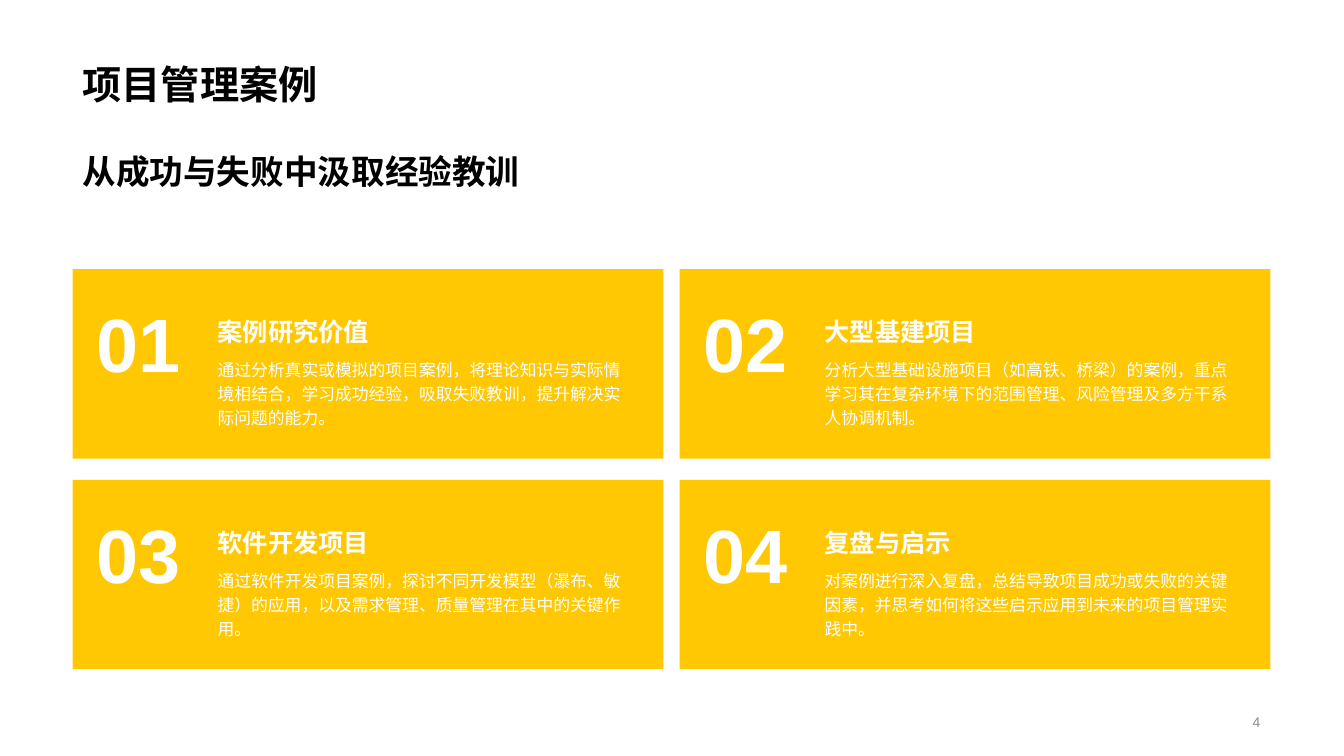
from lxml.etree import SubElement
from pptx import Presentation
from pptx.dml.color import RGBColor
from pptx.enum.shapes import MSO_SHAPE as Kind
from pptx.enum.text import MSO_ANCHOR as Anchor, MSO_AUTO_SIZE as Fit, PP_ALIGN as Align
from pptx.oxml.ns import qn
from pptx.util import Inches, Pt

HAN, LATIN = "Noto Sans CJK SC", "Arial"
BLACK, WHITE, GREY, GOLD = "000000", "FFFFFF", "8C8C8C", "FFC803"

CARDS = [
    ("案例研究价值", "通过分析真实或模拟的项目案例，将理论知识与实际情境相结合，学习成功经验，吸取失败教训，提升解决实际问题的能力。"),
    ("大型基建项目", "分析大型基础设施项目（如高铁、桥梁）的案例，重点学习其在复杂环境下的范围管理、风险管理及多方干系人协调机制。"),
    ("软件开发项目", "通过软件开发项目案例，探讨不同开发模型（瀑布、敏捷）的应用，以及需求管理、质量管理在其中的关键作用。"),
    ("复盘与启示", "对案例进行深入复盘，总结导致项目成功或失败的关键因素，并思考如何将这些启示应用到未来的项目管理实践中。"),
]


def color(code):
    return RGBColor.from_string(code)


class Deck:
    def __init__(self):
        self.file = Presentation()
        self.file.slide_width, self.file.slide_height = Inches(13.33), Inches(7.5)
        self.slide = self.file.slides.add_slide(self.file.slide_layouts[5])

    def label(self, shape, text, size, ink, bold=False, font=HAN,
              anchor=Anchor.TOP, align=Align.LEFT, space=1.0, wrap=True):
        frame = shape.text_frame
        frame.auto_size, frame.word_wrap = Fit.NONE, wrap
        frame.vertical_anchor = anchor
        para = frame.paragraphs[0]
        para.alignment, para.line_spacing = align, space
        run = para.add_run()
        run.text = text
        run.font.name, run.font.size, run.font.bold = font, Pt(size), bold
        run.font.color.rgb = color(ink)
        # East Asian typeface
        SubElement(run.font._element, qn("a:ea"), typeface=font)

    def title(self, text, x, y, w, h, **style):
        box = self.slide.shapes.title
        box.left, box.top, box.width, box.height = map(Inches, (x, y, w, h))
        self.label(box, text, **style)

    def text(self, text, x, y, w, h, **style):
        box = self.slide.shapes.add_textbox(*map(Inches, (x, y, w, h)))
        self.label(box, text, **style)

    def block(self, x, y, w, h, fill):
        box = self.slide.shapes.add_shape(Kind.RECTANGLE, *map(Inches, (x, y, w, h)))
        box.shadow.inherit = False
        box.fill.solid()
        box.fill.fore_color.rgb = color(fill)
        box.line.fill.background()

    def card(self, x, y, num, head, body):
        self.block(x, y, 5.86, 1.88, GOLD)
        self.text(head, x + 1.34, y + 0.11, 4.35, 0.71, size=18, ink=WHITE,
                  bold=True, anchor=Anchor.BOTTOM)
        self.text(body, x + 1.34, y + 0.81, 4.35, 0.91, size=12, ink=WHITE, space=1.2)
        self.text(num, x + 0.14, y + 0.23, 1.2, 1.57, size=54, ink=WHITE,
                  bold=True, font=LATIN, wrap=False)


def main():
    deck = Deck()

    # Headings
    deck.title("项目管理案例", 0.72, 0.14, 11.88, 0.98, size=28, ink=BLACK,
               bold=True, anchor=Anchor.BOTTOM)
    deck.text("从成功与失败中汲取经验教训", 0.72, 1.24, 11.88, 0.91, size=24,
              ink=BLACK, bold=True, anchor=Anchor.MIDDLE)

    # Two by two grid of cards
    for i, (head, body) in enumerate(CARDS):
        row, col = divmod(i, 2)
        deck.card(0.72 + 6.02 * col, 2.67 + 2.09 * row, f"{i + 1:02}", head, body)

    # Page number
    deck.text("4", 8.6, 7.01, 4, 0.3, size=10, ink=GREY, font=LATIN,
              anchor=Anchor.MIDDLE, align=Align.RIGHT)

    deck.file.save("out.pptx")


if __name__ == "__main__":
    main()
